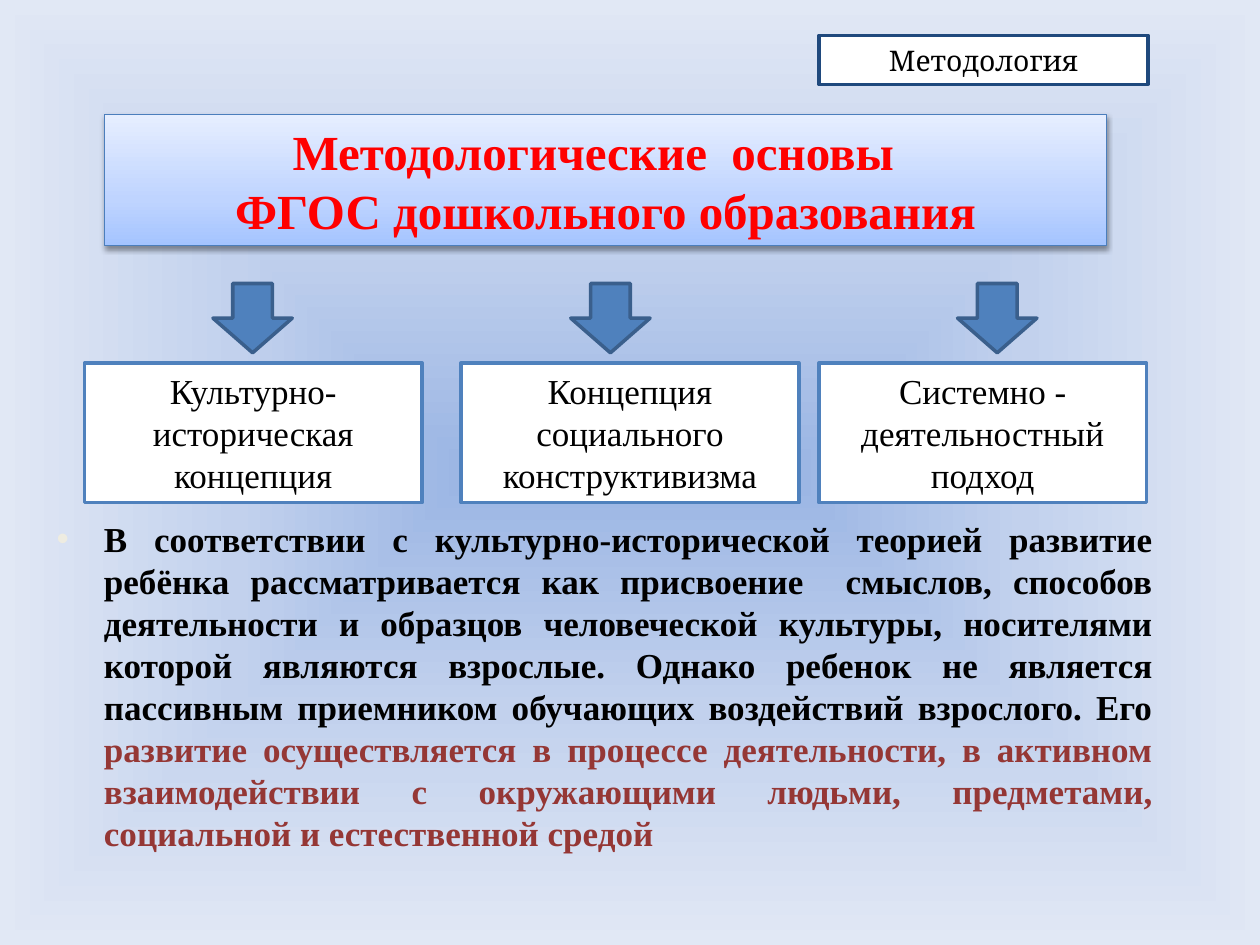
from dataclasses import dataclass

from lxml import etree
from pptx import Presentation
from pptx.dml.color import RGBColor
from pptx.enum.shapes import MSO_SHAPE as Preset
from pptx.enum.text import MSO_ANCHOR as Anchor, MSO_AUTO_SIZE as AutoSize, PP_ALIGN as Align
from pptx.oxml import parse_xml
from pptx.oxml.ns import nsdecls, qn
from pptx.util import Inches, Pt


@dataclass(frozen=True)
class Theme:
    font: str = "Times New Roman"
    label_font: str = "Cambria"
    black: str = "000000"
    white: str = "FFFFFF"
    heading: str = "FF0000"
    emphasis: str = "953735"
    bullet: str = "EEECE1"
    accent: str = "4F81BD"
    arrow_edge: str = "3A5F8C"
    label_edge: str = "1F497D"
    banner_edge: str = "4B7EBC"
    page_stops: tuple = ((0, "9AB5E4"), (50, "C2D1ED"), (100, "E1E8F5"))
    banner_stops: tuple = ((0, "A4C4FF"), (35, "BFD4FF"), (100, "E6EEFF"))
    heading_size: float = 28
    text_size: float = 20
    label_size: float = 16.2


@dataclass(frozen=True)
class Foundation:
    text: str
    left: float
    width: float
    arrow_left: float


THEME = Theme()
BOX_TOP, BOX_HEIGHT = 2.88, 1.11
ARROW_TOP, ARROW_WIDTH, ARROW_HEIGHT = 2.25, 0.63, 0.55
FOUNDATIONS = (
    Foundation("Культурно-историческая концепция", 0.67, 2.68, 1.69),
    Foundation("Концепция социального конструктивизма", 3.66, 2.68, 4.53),
    Foundation("Системно - деятельностный подход", 6.5, 2.6, 7.6),
)
HEADING = "Методологические  основы  \nФГОС дошкольного образования"
THEORY = (
    "В соответствии с культурно-исторической теорией развитие ребёнка "
    "рассматривается как присвоение  смыслов, способов деятельности и образцов "
    "человеческой культуры, носителями которой являются взрослые. Однако ребенок "
    "не является пассивным приемником обучающих воздействий взрослого. Его "
)
CONCLUSION = (
    "развитие осуществляется в процессе деятельности, в активном взаимодействии "
    "с окружающими людьми, предметами, социальной и естественной средой "
)


def place(shape, left: float, top: float, width: float, height: float) -> None:
    shape.left, shape.top = Inches(left), Inches(top)
    shape.width, shape.height = Inches(width), Inches(height)


def paint(shape, fill: str, edge: str, weight: float) -> None:
    shape.fill.solid()
    shape.fill.fore_color.rgb = RGBColor.from_string(fill)
    shape.line.color.rgb = RGBColor.from_string(edge)
    shape.line.width = Pt(weight)


def style_run(run, size: float, color: str, bold: bool = False, font: str = THEME.font) -> None:
    run.font.name, run.font.size, run.font.bold = font, Pt(size), bold
    run.font.color.rgb = RGBColor.from_string(color)


def write_centred(shape, text: str, size: float, color: str,
                  bold: bool = False, font: str = THEME.font) -> None:
    frame = shape.text_frame
    frame.text = text
    frame.word_wrap = True
    frame.auto_size = AutoSize.NONE
    frame.vertical_anchor = Anchor.MIDDLE
    for para in frame.paragraphs:
        para.alignment = Align.CENTER
        for run in para.runs:
            style_run(run, size, color, bold, font)


def apply_gradient(fill, owner, stops: tuple, direction: str) -> None:
    """Give fill, which lives inside the XML element owner, the stops and direction."""
    fill.gradient()
    old = next(owner.iter(qn("a:gradFill")))
    stop_xml = "".join(
        f'<a:gs pos="{position * 1000}"><a:srgbClr val="{color}"/></a:gs>'
        for position, color in stops)
    old.getparent().replace(old, parse_xml(
        f'<a:gradFill {nsdecls("a")} rotWithShape="1">'
        f'<a:gsLst>{stop_xml}</a:gsLst>{direction}</a:gradFill>'))


def add_preset(page, preset, left: float, top: float, width: float, height: float,
               fill: str, edge: str, weight: float):
    shape = page.shapes.add_shape(preset, 0, 0, 0, 0)
    place(shape, left, top, width, height)
    paint(shape, fill, edge, weight)
    shape.shadow.inherit = False
    return shape


def add_banner(page) -> None:
    banner = add_preset(page, Preset.RECTANGLE, 0.83, 0.91, 7.95, 1.04,
                        THEME.white, THEME.banner_edge, 0.75)
    properties = banner._element.spPr
    apply_gradient(banner.fill, properties, THEME.banner_stops,
                   '<a:lin ang="16200000" scaled="0"/>')
    properties.find(qn("a:effectLst")).append(parse_xml(
        f'<a:outerShdw {nsdecls("a")} blurRad="{Pt(3.1)}" dist="{Pt(1.6)}" dir="5400000" '
        f'rotWithShape="0"><a:srgbClr val="{THEME.black}"><a:alpha val="38000"/>'
        '</a:srgbClr></a:outerShdw>'))
    write_centred(banner, HEADING, THEME.heading_size, THEME.heading, bold=True)


def add_foundation(page, item: Foundation) -> None:
    box = add_preset(page, Preset.RECTANGLE, item.left, BOX_TOP, item.width, BOX_HEIGHT,
                     THEME.white, THEME.accent, 2)
    write_centred(box, item.text, THEME.text_size, THEME.black)
    add_preset(page, Preset.DOWN_ARROW, item.arrow_left, ARROW_TOP, ARROW_WIDTH, ARROW_HEIGHT,
               THEME.accent, THEME.arrow_edge, 2)


def fill_body(body) -> None:
    place(body, 0.35, 4.06, 8.9, 3)
    body.text_frame.auto_size = AutoSize.NONE
    para = body.text_frame.paragraphs[0]
    para.alignment = Align.JUSTIFY
    for text, color in ((THEORY, THEME.black), (CONCLUSION, THEME.emphasis)):
        run = para.add_run()
        run.text = text
        style_run(run, THEME.text_size, color, bold=True)
    bullet_color = etree.SubElement(para._p.get_or_add_pPr(), qn("a:buClr"))
    etree.SubElement(bullet_color, qn("a:srgbClr"), val=THEME.bullet)


def main() -> None:
    deck = Presentation()
    deck.slide_width, deck.slide_height = Inches(10), Inches(7.5)
    page = deck.slides.add_slide(deck.slide_layouts[1])
    apply_gradient(page.background.fill, page._element, THEME.page_stops,
                   '<a:path path="shape"><a:fillToRect l="50000" t="50000" '
                   'r="50000" b="50000"/></a:path>')
    fill_body(page.placeholders[1])
    label = page.shapes.title
    place(label, 6.5, 0.28, 2.61, 0.39)
    paint(label, THEME.white, THEME.label_edge, 2)
    write_centred(label, "Методология", THEME.label_size, THEME.black, font=THEME.label_font)
    add_banner(page)
    for item in FOUNDATIONS:
        add_foundation(page, item)
    deck.save("out.pptx")


if __name__ == "__main__":
    main()
